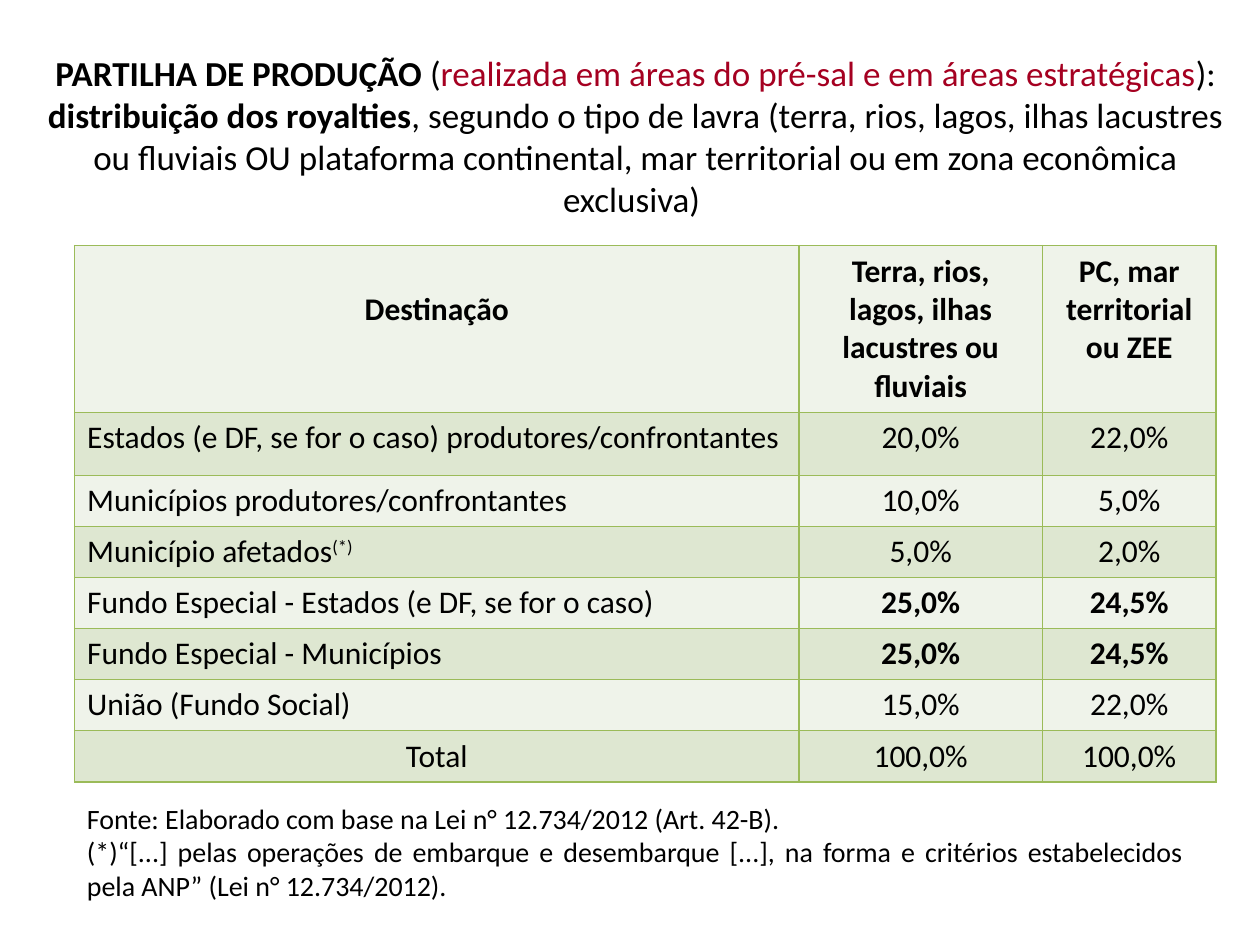
from dataclasses import dataclass

from lxml import etree
from pptx import Presentation
from pptx.dml.color import RGBColor
from pptx.enum import text as t
from pptx.oxml import ns
from pptx.util import Pt


@dataclass(frozen=True)
class Theme:
    face: str = "Calibri"
    ink: str = "000000"
    red: str = "A50021"
    line: str = "9BBB59"
    bands: tuple = ("EFF3EA", "DEE7D1")
    head: int = 20
    body: int = 18
    note: int = 16


THEME = Theme()
LEFT, MID, JUST = t.PP_ALIGN.LEFT, t.PP_ALIGN.CENTER, t.PP_ALIGN.JUSTIFY

# Each title run: text, bold, colour
TITLE = [
    ("PARTILHA DE PRODUÇÃO ", True, THEME.ink),
    ("(", False, THEME.ink),
    ("realizada em áreas do pré-sal e em áreas estratégicas", False, THEME.red),
    ("): ", False, THEME.ink),
    ("distribuição dos royalties", True, THEME.ink),
    (", segundo o tipo de lavra (terra, rios, lagos, ilhas lacustres ou "
     "fluviais OU plataforma continental, mar territorial ou em zona "
     "econômica exclusiva) ", False, THEME.ink),
]
HEADS = ("Destinação", "Terra, rios, lagos, ilhas lacustres ou fluviais",
         "PC, mar territorial ou ZEE")
ROWS = [
    HEADS,
    ("Estados (e DF, se for o caso) produtores/confrontantes", "20,0%", "22,0%"),
    ("Municípios produtores/confrontantes", "10,0%", "5,0%"),
    ("Município afetados", "5,0%", "2,0%"),
    ("Fundo Especial - Estados (e DF, se for o caso)", "25,0%", "24,5%"),
    ("Fundo Especial - Municípios", "25,0%", "24,5%"),
    ("União (Fundo Social)", "15,0%", "22,0%"),
    ("Total", "100,0%", "100,0%"),
]
MARKED, FUNDS, TOTAL = 3, (4, 5), len(ROWS) - 1
WIDTHS = (414, 139, 99.4)
HEIGHTS = (95.2, 36) + (29.2,) * 6
NOTES = (
    "Fonte: Elaborado com base na Lei n° 12.734/2012 (Art. 42-B).",
    "(*)“[...] pelas operações de embarque e desembarque [...], na forma e "
    "critérios estabelecidos pela ANP” (Lei n° 12.734/2012).",
)


def style(para, size, align, bold=False):
    para.alignment = align
    font = para.font
    font.name, font.size, font.bold = THEME.face, Pt(size), bold
    font.color.rgb = RGBColor.from_string(THEME.ink)


def add_title(slide):
    title = slide.shapes.title
    title.left, title.top, title.width, title.height = map(
        Pt, (14.4, 26, 697.6, 104.4))
    frame = title.text_frame
    frame.auto_size = t.MSO_AUTO_SIZE.NONE
    frame.vertical_anchor = t.MSO_ANCHOR.TOP
    para = frame.paragraphs[0]
    style(para, THEME.head, MID)
    for words, bold, color in TITLE:
        run = para.add_run()
        run.text = words
        run.font.bold = bold
        run.font.color.rgb = RGBColor.from_string(color)


def add_edges(cell):
    props = cell._tc.get_or_add_tcPr()
    for side in ("lnL", "lnR", "lnT", "lnB"):
        edge = etree.SubElement(props, ns.qn(f"a:{side}"), w=str(Pt(1)))
        fill = etree.SubElement(edge, ns.qn("a:solidFill"))
        etree.SubElement(fill, ns.qn("a:srgbClr"), val=THEME.line)


def fill_cell(cell, words, row, col):
    add_edges(cell)
    cell.fill.solid()
    cell.fill.fore_color.rgb = RGBColor.from_string(THEME.bands[row % 2])
    para = cell.text_frame.paragraphs[0]
    para.add_run().text = words
    label = col == 0 and 0 < row < TOTAL
    bold = row == 0 or (row in FUNDS and col > 0)
    style(para, THEME.body, LEFT if label else MID, bold)


def add_grid(slide):
    frame = slide.shapes.add_table(
        len(ROWS), len(HEADS), Pt(42.6), Pt(140.4),
        Pt(sum(WIDTHS)), Pt(sum(HEIGHTS)))
    grid = frame.table
    for column, width in zip(grid.columns, WIDTHS):
        column.width = Pt(width)
    for row, (line, height) in enumerate(zip(ROWS, HEIGHTS)):
        grid.rows[row].height = Pt(height)
        for col, words in enumerate(line):
            fill_cell(grid.cell(row, col), words, row, col)

    # The first heading sits one line lower than its neighbours
    grid.cell(0, 0).margin_top = Pt(25.6)
    mark = grid.cell(MARKED, 0).text_frame.paragraphs[0].add_run()
    mark.text = "(*)"
    mark._r.get_or_add_rPr().set("baseline", "30000")


def add_notes(slide):
    box = slide.shapes.add_textbox(Pt(42.6), Pt(454.3), Pt(640.8), Pt(65.5))
    frame = box.text_frame
    frame.word_wrap = True
    for i, words in enumerate(NOTES):
        para = frame.add_paragraph() if i else frame.paragraphs[0]
        para.text = words
        style(para, THEME.note, JUST)


def main():
    deck = Presentation()
    deck.slide_width, deck.slide_height = Pt(720), Pt(540)
    slide = deck.slides.add_slide(deck.slide_layouts[5])
    add_title(slide)
    add_grid(slide)
    add_notes(slide)
    deck.save("out.pptx")


if __name__ == "__main__":
    main()
